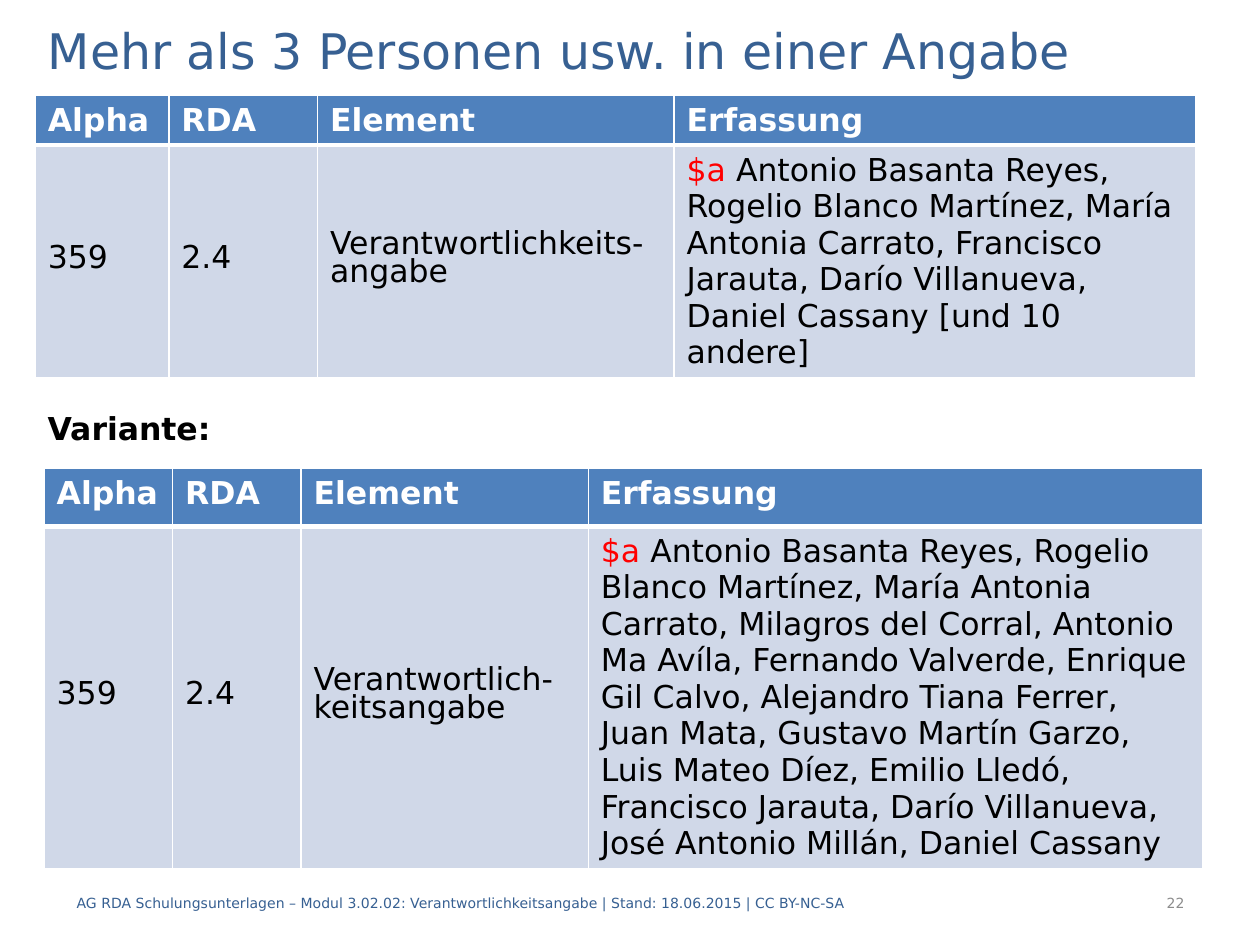
from dataclasses import dataclass

from lxml.etree import SubElement
from pptx import Presentation
from pptx.dml.color import RGBColor
from pptx.enum.text import MSO_ANCHOR, MSO_AUTO_SIZE, PP_ALIGN
from pptx.oxml.ns import qn
from pptx.util import Inches, Pt


@dataclass(frozen=True)
class Theme:
    font: str = "DejaVu Sans"
    title: str = "376092"
    header: str = "4F81BD"
    body: str = "D0D8E8"
    white: str = "FFFFFF"
    black: str = "000000"
    red: str = "FF0000"
    grey: str = "8C8C8C"
    title_size: int = 28
    text_size: int = 18
    footer_size: int = 8


theme = Theme()


def add_run(p, text, size, color, bold=False):
    r = p.add_run()
    r.text = text
    r.font.name = theme.font
    r.font.size = Pt(size)
    r.font.bold = bold
    r.font.color.rgb = RGBColor.from_string(color)


def add_borders(cell, widths):
    tc_pr = cell._tc.get_or_add_tcPr()
    for side, width in zip("LRTB", widths):
        ln = SubElement(tc_pr, qn(f"a:ln{side}"), w=str(Pt(width)))
        fill = SubElement(ln, qn("a:solidFill"))
        SubElement(fill, qn("a:srgbClr"), val=theme.white)


prs = Presentation()
prs.slide_width, prs.slide_height = Inches(10), Inches(7.5)
s = prs.slides.add_slide(prs.slide_layouts[5])

# Title
sp = s.shapes.title
sp.left, sp.top, sp.width, sp.height = Inches(0.28), Inches(0.2), Inches(9.45), Inches(0.4)
tf = sp.text_frame
tf.auto_size = MSO_AUTO_SIZE.NONE
tf.vertical_anchor = MSO_ANCHOR.MIDDLE
p = tf.paragraphs[0]
p.alignment = PP_ALIGN.LEFT
add_run(p, "Mehr als 3 Personen usw. in einer Angabe", theme.title_size, theme.title)

# Tables: left, top, column widths, row heights, element, statement
headers = ["Alpha", "RDA", "Element", "Erfassung"]
tables = [
    (0.28, 0.76, [1.06, 1.18, 2.83, 4.14], [0.38, 1.85], "Verantwortlichkeits-angabe",
     "Antonio Basanta Reyes, Rogelio Blanco Martínez, María Antonia Carrato, "
     "Francisco Jarauta, Darío Villanueva, Daniel Cassany [und 10 andere]"),
    (0.35, 3.72, [1.02, 1.02, 2.28, 4.88], [0.46, 2.7], "Verantwortlich-keitsangabe",
     "Antonio Basanta Reyes, Rogelio Blanco Martínez, María Antonia Carrato, "
     "Milagros del Corral, Antonio Ma Avíla, Fernando Valverde, Enrique Gil Calvo, "
     "Alejandro Tiana Ferrer, Juan Mata, Gustavo Martín Garzo, Luis Mateo Díez, "
     "Emilio Lledó, Francisco Jarauta, Darío Villanueva, José Antonio Millán, "
     "Daniel Cassany"),
]
for left, top, widths, heights, element, statement in tables:
    table = s.shapes.add_table(2, 4, Inches(left), Inches(top),
                               Inches(sum(widths)), Inches(sum(heights))).table
    for column, width in zip(table.columns, widths):
        column.width = Inches(width)
    for row, height in zip(table.rows, heights):
        row.height = Inches(height)

    # Header row
    for cell, text in zip(table.rows[0].cells, headers):
        add_borders(cell, [1, 1, 1, 3])
        cell.fill.solid()
        cell.fill.fore_color.rgb = RGBColor.from_string(theme.header)
        add_run(cell.text_frame.paragraphs[0], text, theme.text_size, theme.white, True)

    # Body row
    for cell, text in zip(table.rows[1].cells, ["359", "2.4", element, statement]):
        add_borders(cell, [1, 1, 3, 1])
        cell.fill.solid()
        cell.fill.fore_color.rgb = RGBColor.from_string(theme.body)
        cell.vertical_anchor = MSO_ANCHOR.MIDDLE
        p = cell.text_frame.paragraphs[0]
        p.space_before = p.space_after = Pt(6)
        if text == statement:
            add_run(p, "$a ", theme.text_size, theme.red)
        else:
            p.line_spacing = Pt(16)
        add_run(p, text, theme.text_size, theme.black)

# Variant label, footer and slide number
labels = [
    ("Variante:", 0.28, 3.2, 3.7, theme.text_size, theme.black, True, PP_ALIGN.LEFT),
    ("AG RDA Schulungsunterlagen – Modul 3.02.02: Verantwortlichkeitsangabe | "
     "Stand: 18.06.2015 | CC BY-NC-SA",
     0.51, 6.97, 7.8, theme.footer_size, theme.title, False, PP_ALIGN.LEFT),
    ("22", 7.91, 6.97, 1.59, theme.footer_size, theme.grey, False, PP_ALIGN.RIGHT),
]
for text, left, top, width, size, color, bold, align in labels:
    sp = s.shapes.add_textbox(Inches(left), Inches(top), Inches(width), Inches(0.4))
    tf = sp.text_frame
    tf.word_wrap = True
    tf.vertical_anchor = MSO_ANCHOR.MIDDLE
    p = tf.paragraphs[0]
    p.alignment = align
    add_run(p, text, size, color, bold)

prs.save("out.pptx")
